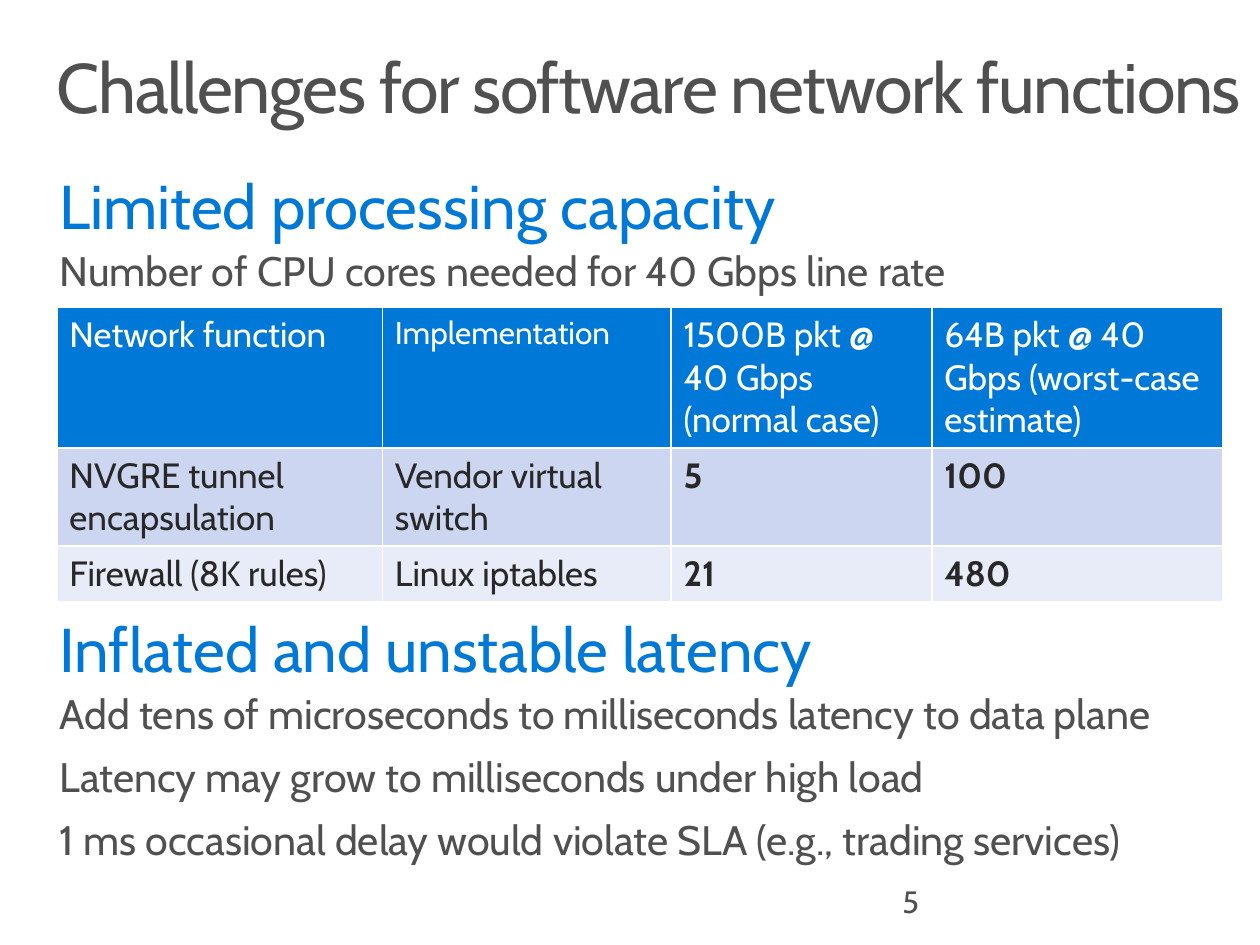
import pptx
import pptx.dml.color
import pptx.enum.text
import pptx.oxml
import pptx.oxml.ns
import pptx.util

Pt = pptx.util.Pt
ANCHOR = pptx.enum.text.MSO_ANCHOR
FONT = "Cabin"
BLUE, GREY, DARK, WHITE = "0078D7", "505050", "282828", "FFFFFF"


def rgb(value):
    return pptx.dml.color.RGBColor.from_string(value)


def add_run(p, text, size, color, bold=False):
    r = p.add_run()
    r.text = text
    r.font.name = FONT
    r.font.size = Pt(size)
    r.font.bold = bold
    r.font.color.rgb = rgb(color)
    return r


prs = pptx.Presentation()
prs.slide_width, prs.slide_height = Pt(720), Pt(540)
s = prs.slides.add_slide(prs.slide_layouts[1])

# Title and body placeholders
title, body = s.shapes.title, s.placeholders[1]
for sp, top, width, height, inset in (
    (title, 23, 718.5, 70.5, 11.5),
    (body, 93.5, 699, 421, 13),
):
    sp.left, sp.top, sp.width, sp.height = Pt(21), Pt(top), Pt(width), Pt(height)
    tf = sp.text_frame
    tf.word_wrap = True
    tf.auto_size = pptx.enum.text.MSO_AUTO_SIZE.NONE
    tf.vertical_anchor = ANCHOR.TOP
    tf.margin_left = tf.margin_right = Pt(inset)
    tf.margin_top = tf.margin_bottom = Pt(7.2)

p = title.text_frame.paragraphs[0]
p.alignment = pptx.enum.text.PP_ALIGN.LEFT
p.line_spacing = 0.9
r = add_run(p, "Challenges for software network functions", 40, GREY)
r.font._element.set("spc", "-80")

# Text, level, space before; the second heading leaves room for the table
lines = [
    ("Limited processing capacity", 0, 0),
    ("Number of CPU cores needed for 40 Gbps line rate", 1, 4.7),
    ("Inflated and unstable latency", 0, 179),
    ("Add tens of microseconds to milliseconds latency to data plane", 1, 4.7),
    ("Latency may grow to milliseconds under high load", 1, 4.7),
    ("1 ms occasional delay would violate SLA (e.g., trading services)", 1, 4.7),
]
tf = body.text_frame
for i, (text, level, before) in enumerate(lines):
    p = tf.add_paragraph() if i else tf.paragraphs[0]
    p.level = level
    p.line_spacing = 0.9
    p.space_before = Pt(before)
    p.space_after = Pt(5.9 if level else 0)
    pPr = p._p.get_or_add_pPr()
    pPr.set("marL", "0")
    pPr.set("indent", "0")
    pPr.append(pptx.oxml.parse_xml(f"<a:buNone {pptx.oxml.ns.nsdecls('a')}/>"))
    add_run(p, text, 23.5 if level else 35.3, GREY if level else BLUE)

# Table of CPU cores
rows = [
    ("Network function", "Implementation", "1500B pkt @ 40 Gbps (normal case)",
     "64B pkt @ 40 Gbps (worst-case estimate)"),
    ("NVGRE tunnel encapsulation", "Vendor virtual switch", "5", "100"),
    ("Firewall (8K rules)", "Linux iptables", "21", "480"),
]
col_widths = [186, 165, 149, 166.5]
row_heights = [79, 56, 30.5]
row_fills = [BLUE, "CCD6F0", "E7ECF8"]
table = s.shapes.add_table(
    len(rows), len(col_widths), Pt(32.5), Pt(175.7),
    Pt(sum(col_widths)), Pt(sum(row_heights)),
).table
for column, width in zip(table.columns, col_widths):
    column.width = Pt(width)
for i, texts in enumerate(rows):
    table.rows[i].height = Pt(row_heights[i])
    for j, text in enumerate(texts):
        cell = table.cell(i, j)
        tcPr = cell._tc.get_or_add_tcPr()
        for side in ("lnL", "lnR", "lnT", "lnB"):
            tcPr.append(pptx.oxml.parse_xml(
                f'<a:{side} {pptx.oxml.ns.nsdecls("a")} w="{Pt(1)}"><a:solidFill>'
                f'<a:srgbClr val="{WHITE}"/></a:solidFill></a:{side}>'
            ))
        cell.fill.solid()
        cell.fill.fore_color.rgb = rgb(row_fills[i])
        add_run(
            cell.text_frame.paragraphs[0], text,
            18 if text == "Implementation" else 20,
            DARK if i else WHITE, bold=i > 0 and j > 1,
        )

# Slide number
sp = s.shapes.add_textbox(Pt(508.5), Pt(500.5), Pt(162), Pt(29))
tf = sp.text_frame
tf.word_wrap = True
tf.vertical_anchor = ANCHOR.MIDDLE
add_run(tf.paragraphs[0], "5", 17.6, GREY)

prs.save("out.pptx")
